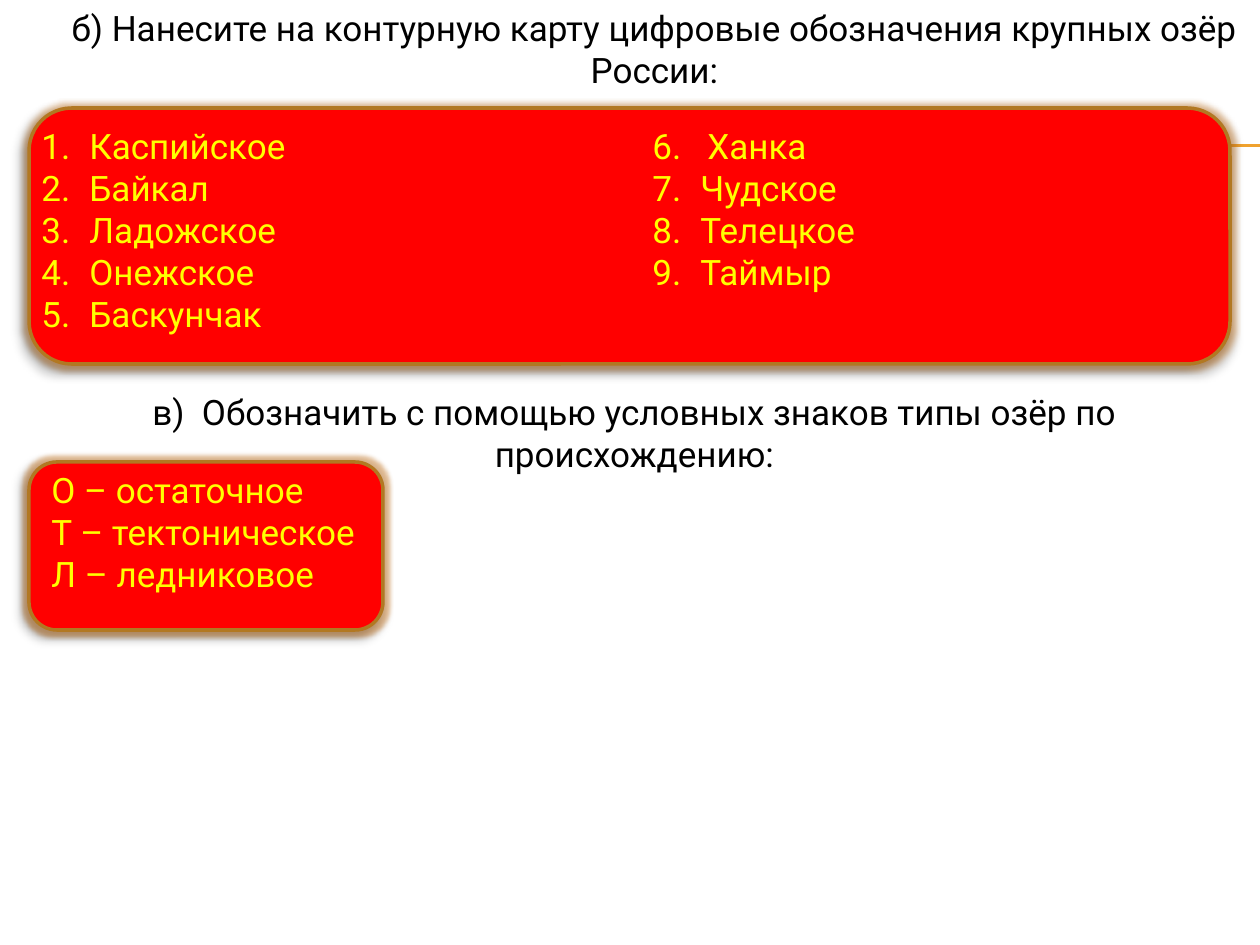
"""Build a slide with map tasks about the large lakes of Russia."""
from lxml import etree
from pptx import Presentation
from pptx.dml.color import RGBColor
from pptx.enum.shapes import MSO_CONNECTOR, MSO_SHAPE
from pptx.enum.text import PP_ALIGN
from pptx.oxml import parse_xml
from pptx.oxml.ns import qn
from pptx.util import Emu, Pt

STRAIGHT = MSO_CONNECTOR.STRAIGHT
ROUND_RECT = MSO_SHAPE.ROUNDED_RECTANGLE
LEFT, CENTER = PP_ALIGN.LEFT, PP_ALIGN.CENTER
SCALE = 914400 / 126
FONT = "Roboto"
BLACK, YELLOW, RED = "000000", "FFFF00", "FF0000"
BROWN, ORANGE = "B27822", "F0A22E"
GLOW = """<a:effectLst xmlns:a="http://schemas.openxmlformats.org/drawingml/2006/main">
<a:glow rad="63500"><a:srgbClr val="C8751E"><a:alpha val="45000"/></a:srgbClr></a:glow>
<a:outerShdw blurRad="50800" dist="38100" dir="8100000" algn="tr" rotWithShape="0">
<a:srgbClr val="000000"><a:alpha val="40000"/></a:srgbClr></a:outerShdw>
</a:effectLst>"""


def px(n):
    return Emu(round(n * SCALE))


def rgb(value):
    return RGBColor.from_string(value)


prs = Presentation()
prs.slide_width, prs.slide_height = px(1260), px(945)
s = prs.slides.add_slide(prs.slide_layouts[6])

for y in (145, 146):
    ln = s.shapes.add_connector(STRAIGHT, px(70), px(y), px(1260), px(y))
    ln.line.color.rgb = rgb(ORANGE)
    ln.line.width = Pt(0.75)
    etree.SubElement(ln._element.spPr, qn("a:effectLst"))

for x, y, w, h in ((29, 462, 354, 168), (29, 108, 1201, 256)):
    sp = s.shapes.add_shape(ROUND_RECT, px(x), px(y), px(w), px(h))
    sp.fill.solid()
    sp.fill.fore_color.rgb = rgb(RED)
    sp.line.color.rgb = rgb(BROWN)
    sp.line.width = Pt(2)
    sp._element.spPr.append(parse_xml(GLOW))

texts = [
    (49, 0, 1211, 97, BLACK, CENTER, None,
     ["б) Нанесите на контурную карту цифровые обозначения крупных озёр России:"]),
    (29, 118, 532, 224, YELLOW, LEFT, 1,
     ["Каспийское", "Байкал", "Ладожское", "Онежское", "Баскунчак"]),
    (640, 118, 532, 183, YELLOW, LEFT, 7,
     ["6.\tХанка", "Чудское", "Телецкое", "Таймыр"]),
    (29, 384, 1211, 55, BLACK, CENTER, None,
     ["в)  Обозначить с помощью условных знаков типы озёр по происхождению:"]),
    (39, 462, 1182, 140, YELLOW, LEFT, None,
     ["О – остаточное", "Т – тектоническое", "Л – ледниковое"]),
]
for x, y, w, h, color, align, start, lines in texts:
    tf = s.shapes.add_textbox(px(x), px(y), px(w), px(h)).text_frame
    tf.word_wrap = True
    for i, line in enumerate(lines):
        p = tf.paragraphs[0] if i == 0 else tf.add_paragraph()
        p.alignment = align
        if start:
            typed = "\t" in line
            indent = px(55 if typed else 48)
            pPr = p._p.get_or_add_pPr()
            pPr.set("marL", str(indent))
            pPr.set("indent", str(-indent))
            if not typed:
                etree.SubElement(pPr, qn("a:buFont"), typeface=FONT)
                etree.SubElement(pPr, qn("a:buAutoNum"), type="arabicPeriod", startAt=str(start))
        r = p.add_run()
        r.text = line
        r.font.name = FONT
        r.font.size = Pt(20)
        r.font.color.rgb = rgb(color)

prs.save("out.pptx")
